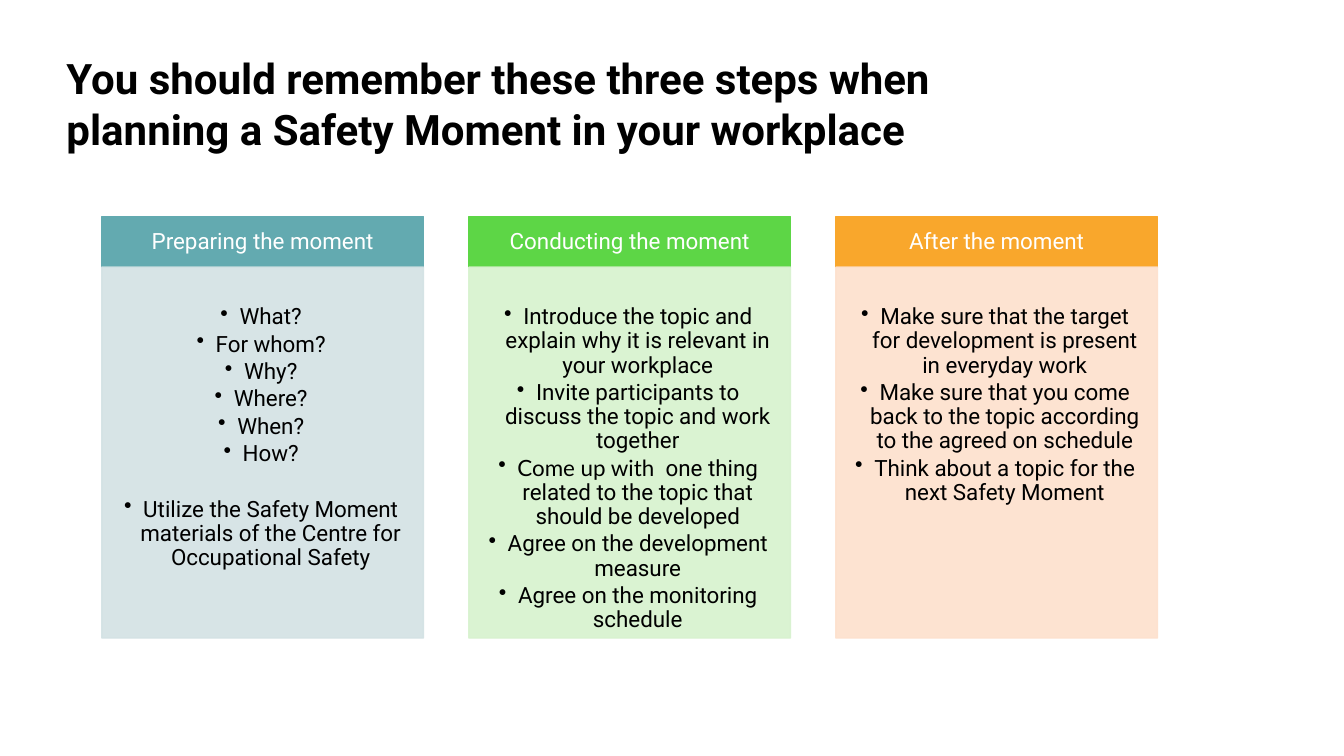
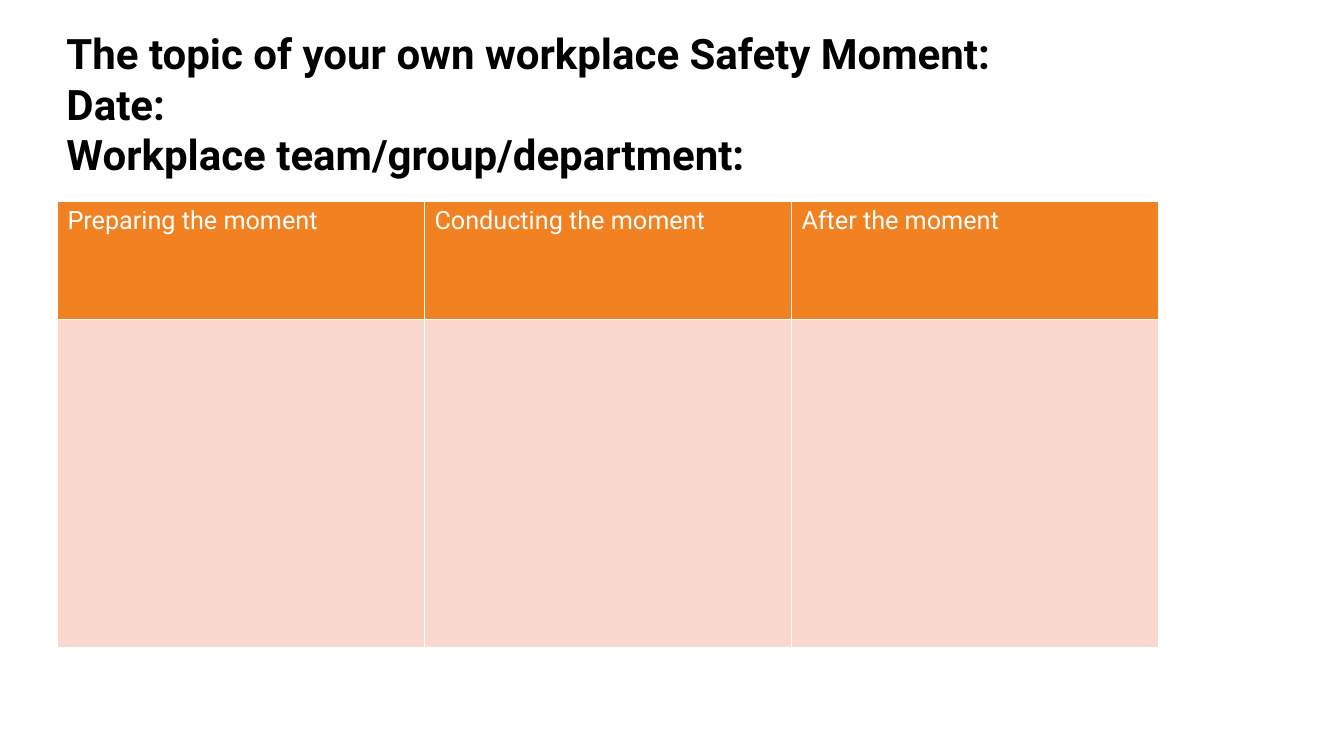
"""Build two slides about planning a Safety Moment in the workplace."""
from dataclasses import dataclass

from lxml.etree import SubElement
from pptx import Presentation
from pptx.dml.color import RGBColor
from pptx.enum.shapes import MSO_SHAPE
from pptx.enum.text import MSO_ANCHOR, PP_ALIGN
from pptx.oxml.ns import qn
from pptx.util import Inches, Pt


@dataclass(frozen=True)
class Theme:
    font: str = "Roboto"
    accent_font: str = "Lato"
    black: str = "000000"
    white: str = "FFFFFF"
    table_header: str = "F18121"
    table_body: str = "FAD8CD"
    title_size: int = 30
    table_size: int = 18
    step_size: int = 16


THEME = Theme()


def add_run(paragraph, text, size, color, font=THEME.font, bold=False):
    run = paragraph.add_run()
    run.text = text
    run.font.name = font
    run.font.size = Pt(size)
    run.font.bold = bold
    run.font.color.rgb = RGBColor.from_string(color)


def add_title(slide, lines):
    title = slide.shapes.add_textbox(Inches(0.66), Inches(0.52), Inches(9.64), Inches(1.01))
    frame = title.text_frame
    frame.word_wrap = True
    frame.vertical_anchor = MSO_ANCHOR.MIDDLE
    frame.margin_left = frame.margin_right = frame.margin_top = frame.margin_bottom = 0
    paragraph = frame.paragraphs[0]
    for index, line in enumerate(lines):
        if index:
            paragraph.add_line_break()
        add_run(paragraph, line, THEME.title_size, THEME.black, bold=True)


presentation = Presentation()
presentation.slide_width = Inches(13.33)
presentation.slide_height = Inches(7.5)
blank_layout = presentation.slide_layouts[6]

steps = [
    ("Preparing the moment", "63AAB0", "D3E2E4", [
        "What?", "For whom?", "Why?", "Where?", "When?", "How?",
        "Utilize the Safety Moment materials of the Centre for Occupational Safety",
    ]),
    ("Conducting the moment", "5DD646", "D7F2CE", [
        "Introduce the topic and explain why it is relevant in your workplace",
        "Invite participants to discuss the topic and work together",
        ("Come up with ", " one thing related to the topic that should be developed"),
        "Agree on the development measure",
        "Agree on the monitoring schedule",
    ]),
    ("After the moment", "F9A72C", "FDE1CD", [
        "Make sure that the target for development is present in everyday work",
        "Make sure that you come back to the topic according to the agreed on schedule",
        "Think about a topic for the next Safety Moment",
    ]),
]

steps_slide = presentation.slides.add_slide(blank_layout)
add_title(steps_slide, [
    "You should remember these three steps when planning a Safety Moment in your workplace"])

for column, (heading, header_color, body_color, items) in enumerate(steps):
    left = Inches(1.01 + 3.64 * column)
    header = steps_slide.shapes.add_shape(
        MSO_SHAPE.RECTANGLE, left, Inches(2.15), Inches(3.19), Inches(0.5))
    body = steps_slide.shapes.add_shape(
        MSO_SHAPE.RECTANGLE, left, Inches(2.65), Inches(3.19), Inches(3.68))
    for shape, color in ((header, header_color), (body, body_color)):
        shape.shadow.inherit = False
        shape.fill.solid()
        shape.fill.fore_color.rgb = RGBColor.from_string(color)
        shape.line.color.rgb = RGBColor.from_string(color)
        shape.line.width = Pt(1)
        shape.text_frame.word_wrap = True
    for color_element in body._element.spPr.iter(qn("a:srgbClr")):
        SubElement(color_element, qn("a:alpha"), val="90000")

    frame = header.text_frame
    frame.vertical_anchor = MSO_ANCHOR.MIDDLE
    frame.margin_left = frame.margin_right = Inches(0.12)
    frame.margin_top = frame.margin_bottom = Inches(0.07)
    paragraph = frame.paragraphs[0]
    paragraph.alignment = PP_ALIGN.CENTER
    paragraph.line_spacing = 0.9
    add_run(paragraph, heading, THEME.step_size, THEME.white)

    frame = body.text_frame
    frame.vertical_anchor = MSO_ANCHOR.TOP
    frame.margin_left = Inches(0.09)
    frame.margin_right = Inches(0.12)
    frame.margin_top = Inches(0.38)
    frame.margin_bottom = Inches(0)
    for index, item in enumerate(items):
        paragraph = frame.add_paragraph() if index else frame.paragraphs[0]
        properties = paragraph._p.get_or_add_pPr()
        properties.set("marL", str(Inches(0.19)))
        properties.set("indent", str(-Inches(0.19)))
        SubElement(properties, qn("a:buChar"), char="•")
        paragraph.alignment = PP_ALIGN.CENTER
        paragraph.line_spacing = 0.9
        paragraph.space_after = Pt(2.3)
        if index and items[index - 1] == "How?":
            paragraph.space_before = Pt(20)
        if isinstance(item, tuple):
            opening, item = item
            add_run(paragraph, opening, THEME.step_size, THEME.black, THEME.accent_font)
        add_run(paragraph, item, THEME.step_size, THEME.black)

plan_slide = presentation.slides.add_slide(blank_layout)
add_title(plan_slide, [
    "The topic of your own workplace Safety Moment:",
    "Date:",
    "Workplace team/group/department:",
])

table = plan_slide.shapes.add_table(
    2, len(steps), Inches(0.57), Inches(2), Inches(10.92), Inches(4.42)).table
table.rows[0].height = Inches(1.17)
table.rows[1].height = Inches(3.25)
for column, step in enumerate(steps):
    table.columns[column].width = Inches(3.64)
    for row, color in enumerate((THEME.table_header, THEME.table_body)):
        cell = table.cell(row, column)
        properties = cell._tc.get_or_add_tcPr()
        for side in ("a:lnL", "a:lnR", "a:lnT", "a:lnB"):
            border = SubElement(properties, qn(side), w=str(Pt(1)))
            border_fill = SubElement(border, qn("a:solidFill"))
            SubElement(border_fill, qn("a:srgbClr"), val=THEME.white)
        cell.fill.solid()
        cell.fill.fore_color.rgb = RGBColor.from_string(color)
    add_run(table.cell(0, column).text_frame.paragraphs[0], step[0],
            THEME.table_size, THEME.white)

presentation.save("out.pptx")
